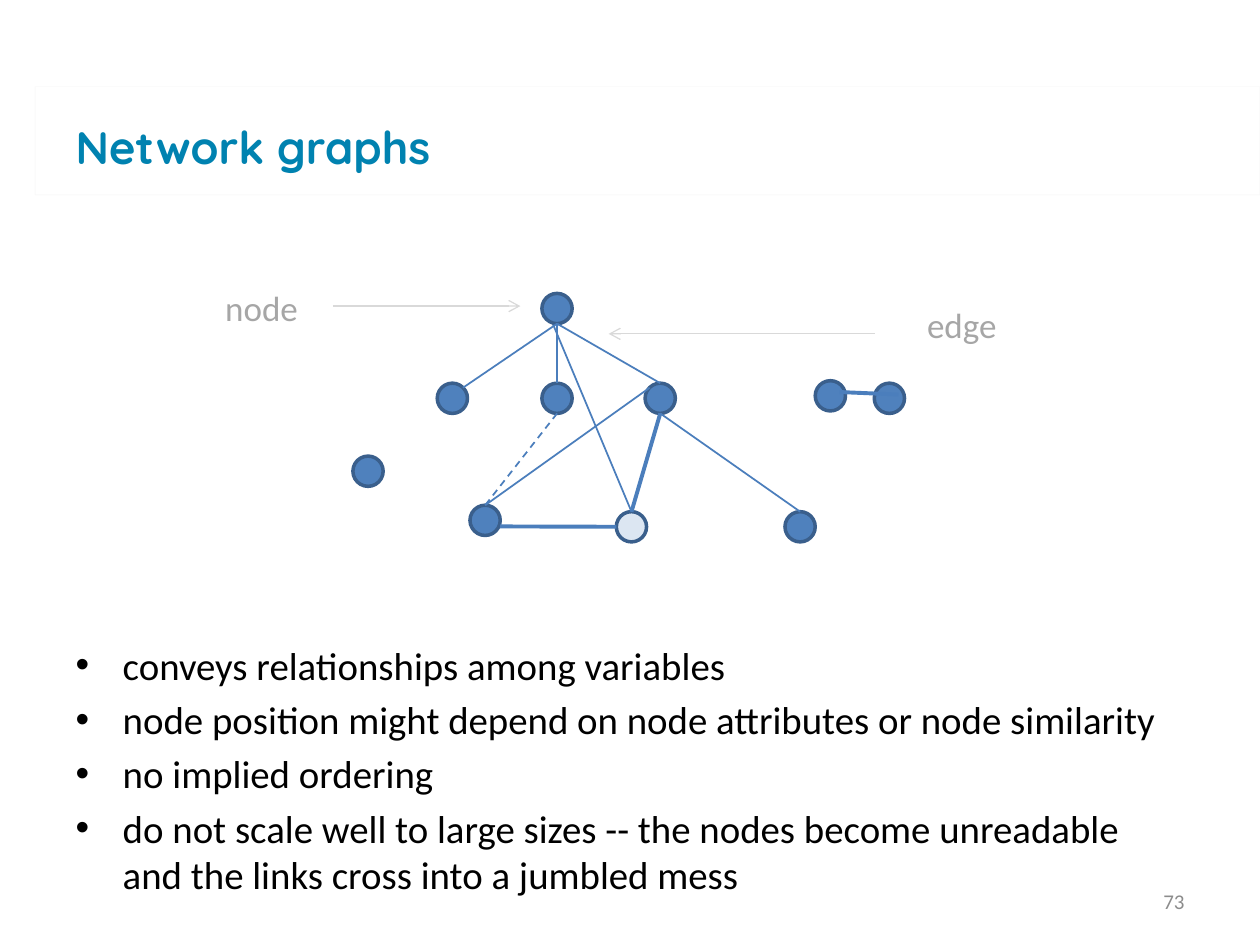
from lxml.etree import SubElement
from pptx import Presentation
from pptx.dml.color import RGBColor
from pptx.enum.dml import MSO_LINE
from pptx.enum.shapes import MSO_CONNECTOR, MSO_SHAPE
from pptx.enum.text import MSO_ANCHOR, MSO_AUTO_SIZE, PP_ALIGN
from pptx.oxml.ns import qn
from pptx.util import Cm, Pt

COLORS = {
    "background": "FFFFFF", "panel_line": "F2F2F2", "title": "0082B0",
    "body": "000000", "label": "A6A6A6", "number": "8C8C8C",
    "node": "4F81BD", "pale_node": "DCE6F2", "node_line": "3A5F8C",
    "edge": "4B7EBC", "pointer": "D9D9D9",
}
RADIUS = 0.305
NODES = {
    "root": (11.23, 6.22), "left": (9.12, 8.03), "right": (13.31, 8.03),
    "middle": (11.23, 8.03), "pale": (12.73, 10.62),
    "pair_right": (17.93, 8.03), "far": (16.13, 10.62),
    "low": (9.78, 10.49), "pair_left": (16.74, 7.98), "alone": (7.42, 9.5),
}
SITES = {
    "top": (0, -1), "bottom": (0, 1), "west": (-1, 0),
    "northeast": (0.7, -0.7), "northwest": (-0.7, -0.7),
    "inner": (0.6, -0.25), "below": (-0.25, 1.08), "side": (1, 0.4),
}
EDGES = [
    ("root", "bottom", "left", "northeast", 1, None),
    ("root", "bottom", "middle", "top", 1, None),
    ("root", "bottom", "right", "top", 1, None),
    ("right", "bottom", "pale", "top", 2.25, None),
    ("right", "bottom", "far", "top", 1, None),
    ("middle", "bottom", "low", "top", 1, MSO_LINE.DASH),
    ("pair_right", "inner", "pair_left", "inner", 2.25, None),
    ("right", "northwest", "low", "top", 1, None),
    ("root", "below", "pale", "top", 1, None),
    ("pale", "west", "low", "side", 2.25, None),
]
POINTS = [
    "conveys relationships among variables",
    "node position might depend on node attributes or node similarity",
    "no implied ordering",
    "do not scale well to large sizes -- the nodes become unreadable "
    "and the links cross into a jumbled mess",
]


def color(name):
    return RGBColor.from_string(COLORS[name])


def write(paragraph, text, *, size, ink, font="Calibri", bold=False,
          align=PP_ALIGN.LEFT):
    paragraph.alignment = align
    run = paragraph.add_run()
    run.text = text
    run.font.name = font
    run.font.size = Pt(size)
    run.font.bold = bold
    run.font.color.rgb = color(ink)


def place(holder, left, top, width, height, anchor=MSO_ANCHOR.TOP):
    holder.left, holder.top = Cm(left), Cm(top)
    holder.width, holder.height = Cm(width), Cm(height)
    frame = holder.text_frame
    frame.word_wrap = True
    frame.auto_size = MSO_AUTO_SIZE.NONE
    frame.vertical_anchor = anchor
    return frame


def add_label(slide, text, left, top, width, height, **style):
    label = slide.shapes.add_textbox(0, 0, 0, 0)
    frame = place(label, left, top, width, height, MSO_ANCHOR.MIDDLE)
    write(frame.paragraphs[0], text, **style)


def add_panel(slide):
    panel = slide.shapes.add_shape(
        MSO_SHAPE.RECTANGLE, Cm(0.71), Cm(1.75), Cm(24.69), Cm(2.18))
    panel.shadow.inherit = False
    panel.fill.solid()
    panel.fill.fore_color.rgb = color("background")
    panel.line.color.rgb = color("panel_line")
    panel.line.width = Pt(0.25)
    tint = panel.line._get_or_add_ln().find(".//" + qn("a:srgbClr"))
    SubElement(tint, qn("a:alpha"), val="66000")
    slide.shapes._spTree.insert(2, panel._element)


def add_node(slide, center, fill):
    x, y = center
    node = slide.shapes.add_shape(
        MSO_SHAPE.OVAL, Cm(x - RADIUS), Cm(y - RADIUS),
        Cm(2 * RADIUS), Cm(2 * RADIUS))
    node.shadow.inherit = False
    node.fill.solid()
    node.fill.fore_color.rgb = color(fill)
    node.line.color.rgb = color("node_line")
    node.line.width = Pt(2)


def add_line(slide, start, end, ink, width, dash=None, arrow=False):
    line = slide.shapes.add_connector(
        MSO_CONNECTOR.STRAIGHT, *(Cm(value) for value in (*start, *end)))
    line.line.color.rgb = color(ink)
    line.line.width = Pt(width)
    if dash:
        line.line.dash_style = dash
    if arrow:
        SubElement(line.line._get_or_add_ln(), qn("a:tailEnd"), type="arrow")
    SubElement(line._element.spPr, qn("a:effectLst"))


def site(node, side):
    (x, y), (dx, dy) = NODES[node], SITES[side]
    return x + dx * RADIUS, y + dy * RADIUS


def add_bullets(slide):
    frame = place(slide.placeholders[1], 1.27, 12.8, 22.86, 5.6)
    for index, point in enumerate(POINTS):
        paragraph = frame.add_paragraph() if index else frame.paragraphs[0]
        properties = paragraph._p.get_or_add_pPr()
        properties.set("marL", str(Cm(0.95)))
        properties.set("indent", str(-Cm(0.95)))
        SubElement(properties, qn("a:buFont"), typeface="Arial")
        SubElement(properties, qn("a:buChar"), char="•")
        paragraph.space_before = Pt(4.4 if index else 0)
        write(paragraph, point, size=22.2, ink="body")


def add_network(slide):
    for name, center in NODES.items():
        add_node(slide, center, "pale_node" if name == "pale" else "node")
    for origin, exit_side, target, entry_side, width, dash in EDGES:
        add_line(slide, site(origin, exit_side), site(target, entry_side),
                 "edge", width, dash)
    for text, left, top in (("node", 4.29, 5.64), ("edge", 18.44, 5.99)):
        add_label(slide, text, left, top, 2.39, 1.12, size=20, ink="label")
    for start, end in (((6.71, 6.17), (10.49, 6.17)),
                       ((17.63, 6.73), (12.27, 6.73))):
        add_line(slide, start, end, "pointer", 0.75, arrow=True)


def main():
    deck = Presentation()
    deck.slide_width, deck.slide_height = Cm(25.4), Cm(19.05)
    slide = deck.slides.add_slide(deck.slide_layouts[1])
    add_panel(slide)
    title = place(slide.shapes.title, 1.27, 1.35, 22.86, 3.18,
                  MSO_ANCHOR.MIDDLE)
    write(title.paragraphs[0], "Network graphs", size=26, ink="title",
          font="Quicksand", bold=True)
    add_bullets(slide)
    add_label(slide, "73", 18.21, 17.65, 5.92, 1.02, size=12, ink="number",
              align=PP_ALIGN.RIGHT)
    add_network(slide)
    deck.save("out.pptx")


if __name__ == "__main__":
    main()
